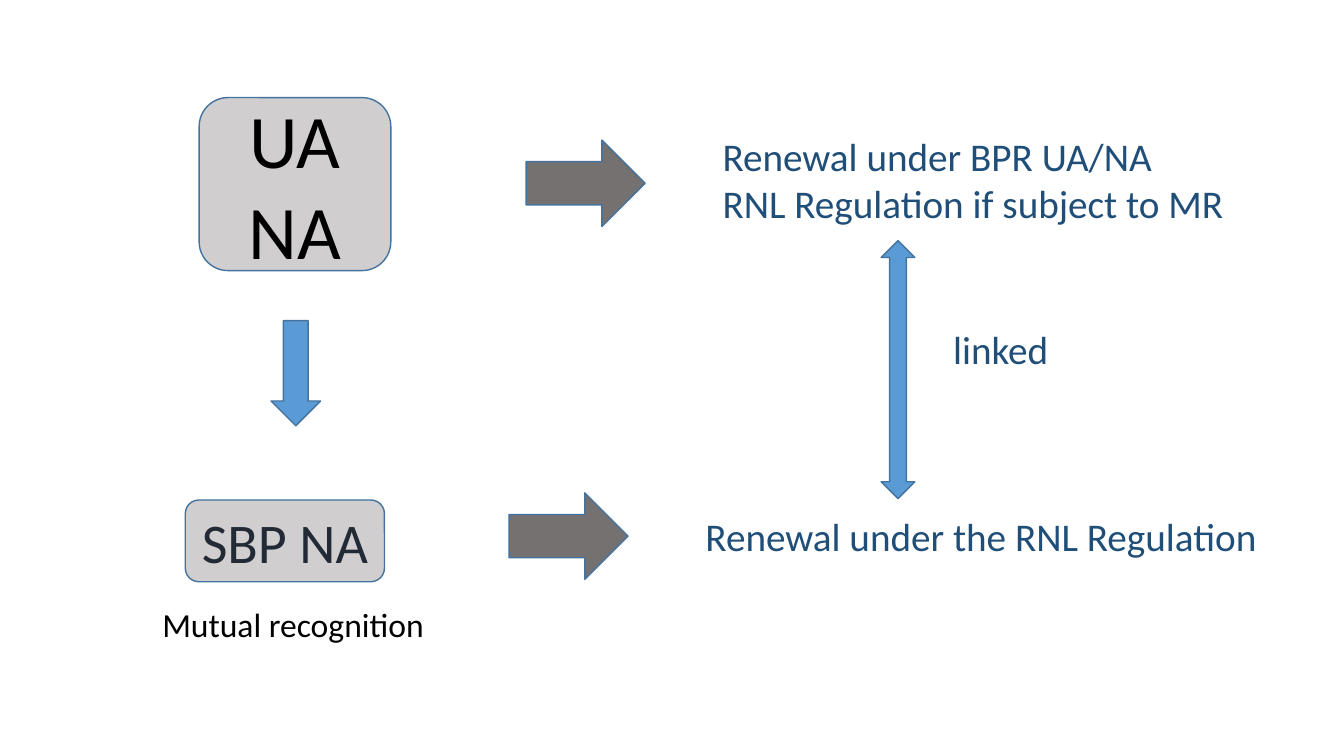
from pptx import Presentation
from pptx import util as u
from pptx.dml.color import RGBColor
from pptx.enum import shapes, text

COLORS = {
    "box": "D0CECE",
    "outline": "43739E",
    "flow": "5B9BD5",
    "outcome": "767171",
    "black": "000000",
    "dark": "222A35",
    "navy": "1F4E79",
}
KINDS = shapes.MSO_SHAPE
ALIGN = text.PP_ALIGN


class RenewalSlide:
    font = "Calibri"

    def __init__(self, deck):
        self.slide = deck.slides.add_slide(deck.slide_layouts[6])

    def color(self, name):
        return RGBColor.from_string(COLORS[name])

    def set_lines(self, frame, lines, size, color, align):
        style = {"name": self.font, "size": u.Pt(size)}
        frame.text = "\n".join(lines)
        for paragraph in frame.paragraphs:
            paragraph.alignment = align
            for key, value in style.items():
                setattr(paragraph.font, key, value)
            paragraph.font.color.rgb = self.color(color)

    def block(self, kind, place, fill, rotation=0):
        block = self.slide.shapes.add_shape(kind, *map(u.Cm, place))
        block.shadow.inherit = False
        block.rotation = rotation
        block.fill.solid()
        block.fill.fore_color.rgb = self.color(fill)
        block.line.color.rgb = self.color("outline")
        block.line.width = u.Pt(1)
        return block

    def box(self, place, lines, size, color):
        box = self.block(KINDS.ROUNDED_RECTANGLE, place, "box")
        box.text_frame.vertical_anchor = text.MSO_ANCHOR.MIDDLE
        self.set_lines(box.text_frame, lines, size, color, ALIGN.CENTER)

    def label(self, place, lines, size=28, color="navy", align=ALIGN.LEFT, wrap=False):
        frame = self.slide.shapes.add_textbox(*map(u.Cm, place)).text_frame
        layout = {"word_wrap": wrap, "auto_size": text.MSO_AUTO_SIZE.SHAPE_TO_FIT_TEXT}
        for key, value in layout.items():
            setattr(frame, key, value)
        self.set_lines(frame, lines, size, color, align)


def main():
    deck = Presentation()
    deck.slide_width, deck.slide_height = u.Cm(33.87), u.Cm(19.05)
    renewal = RenewalSlide(deck)

    renewal.box((5.02, 2.46, 4.83, 4.36), ["UA", "NA"], 54, "black")
    renewal.box((4.67, 12.6, 5.02, 2.06), ["SBP NA"], 40, "dark")
    renewal.label((3.84, 15.09, 7.16, 1.27), ["Mutual recognition"], 24, "black")

    renewal.block(KINDS.DOWN_ARROW, (6.83, 8.08, 1.25, 2.65), "flow")
    for left, top in ((12.83, 12.42), (13.26, 3.53)):
        renewal.block(KINDS.RIGHT_ARROW, (left, top, 3, 2.18), "outcome")

    renewal.label((17.53, 12.78, 14.55, 1.45), ["Renewal under the RNL Regulation"])
    renewal.label(
        (17.96, 3.2, 13.82, 2.64),
        ["Renewal under BPR UA/NA", "RNL Regulation if subject to MR"],
    )
    renewal.block(KINDS.LEFT_RIGHT_ARROW, (19.38, 8.89, 6.5, 0.85), "flow", 90)
    renewal.label((22.63, 8.08, 5.18, 1.45), ["linked"], align=ALIGN.CENTER, wrap=True)

    deck.save("out.pptx")


if __name__ == "__main__":
    main()
